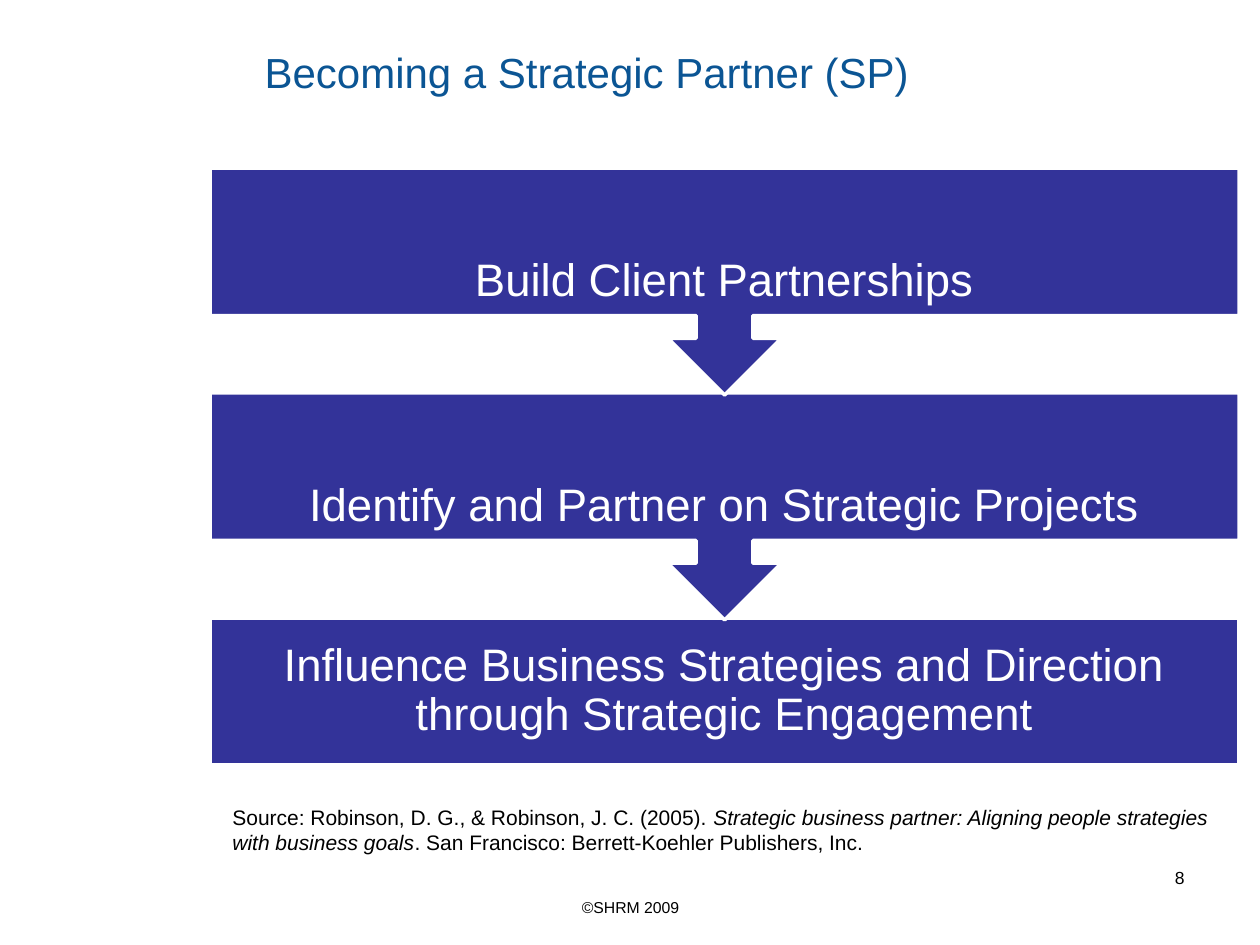
"""Build a slide with three downward steps to becoming a strategic partner."""
from pptx import Presentation
from pptx.dml.color import RGBColor
from pptx.enum.shapes import MSO_SHAPE as Shape
from pptx.enum.text import MSO_ANCHOR as Anchor, MSO_AUTO_SIZE as AutoSize, PP_ALIGN as Align
from pptx.util import Emu, Pt

SCALE = 914400 / 126


def px(*lengths):
    return [Emu(round(length * SCALE)) for length in lengths]


def write(shape, runs, size, color, align=Align.LEFT, anchor=Anchor.TOP, margin=None, spacing=1.0):
    frame = shape.text_frame
    frame_format = {"word_wrap": True, "auto_size": AutoSize.NONE, "vertical_anchor": anchor}
    if margin:
        for side in ("left", "top", "right", "bottom"):
            frame_format[f"margin_{side}"] = px(margin)[0]
    for name, value in frame_format.items():
        setattr(frame, name, value)
    paragraph = frame.paragraphs[0]
    for name, value in {"alignment": align, "line_spacing": spacing, "space_before": Pt(0)}.items():
        setattr(paragraph, name, value)
    for text, italic in runs:
        run = paragraph.add_run()
        run.text = text
        for name, value in {"name": "Arial", "size": Pt(size), "italic": italic}.items():
            setattr(run.font, name, value)
        run.font.color.rgb = RGBColor.from_string(color)


presentation = Presentation()
presentation.slide_width, presentation.slide_height = px(1260, 945)
slide = presentation.slides.add_slide(presentation.slide_layouts[5])

title = slide.shapes.title
title.left, title.top, title.width, title.height = px(252, 38, 945, 67)
write(title, [("Becoming a Strategic Partner (SP)", False)], 24, "0B5594", anchor=Anchor.MIDDLE)

steps = [
    ("Build Client Partnerships", Shape.UP_ARROW_CALLOUT, 227),
    ("Identify and Partner on Strategic Projects", Shape.UP_ARROW_CALLOUT, 227),
    ("Influence Business Strategies and Direction through Strategic Engagement", Shape.RECTANGLE, 147),
]
for index, (text, kind, height) in reversed(list(enumerate(steps))):
    box = px(210, 168 + 225 * index, 1029, height)
    step = slide.shapes.add_shape(kind, *box)
    step.shadow.inherit = False
    step.rotation = 180 if kind == Shape.UP_ARROW_CALLOUT else 0
    step.fill.solid()
    step.fill.fore_color.rgb = RGBColor.from_string("333399")
    step.line.color.rgb = RGBColor.from_string("FFFFFF")
    step.line.width = Pt(2)
    label = slide.shapes.add_textbox(*box)
    write(label, [(text, False)], 26, "FFFFFF", Align.CENTER, Anchor.MIDDLE, margin=25, spacing=0.9)

source = [
    ("Source: Robinson, D. G., & Robinson, J. C. (2005). ", False),
    ("Strategic business partner: Aligning people strategies with business goals", True),
    (". San Francisco: Berrett-Koehler Publishers, Inc.", False),
]
notes = [
    ((220, 798, 1040, 63), source, 12, Align.LEFT),
    ((903, 861, 294, 65), [("8", False)], 10, Align.RIGHT),
    ((431, 892, 399, 34), [("©SHRM 2009", False)], 9, Align.CENTER),
]
for box, runs, size, align in notes:
    write(slide.shapes.add_textbox(*px(*box)), runs, size, "000000", align)

presentation.save("out.pptx")
